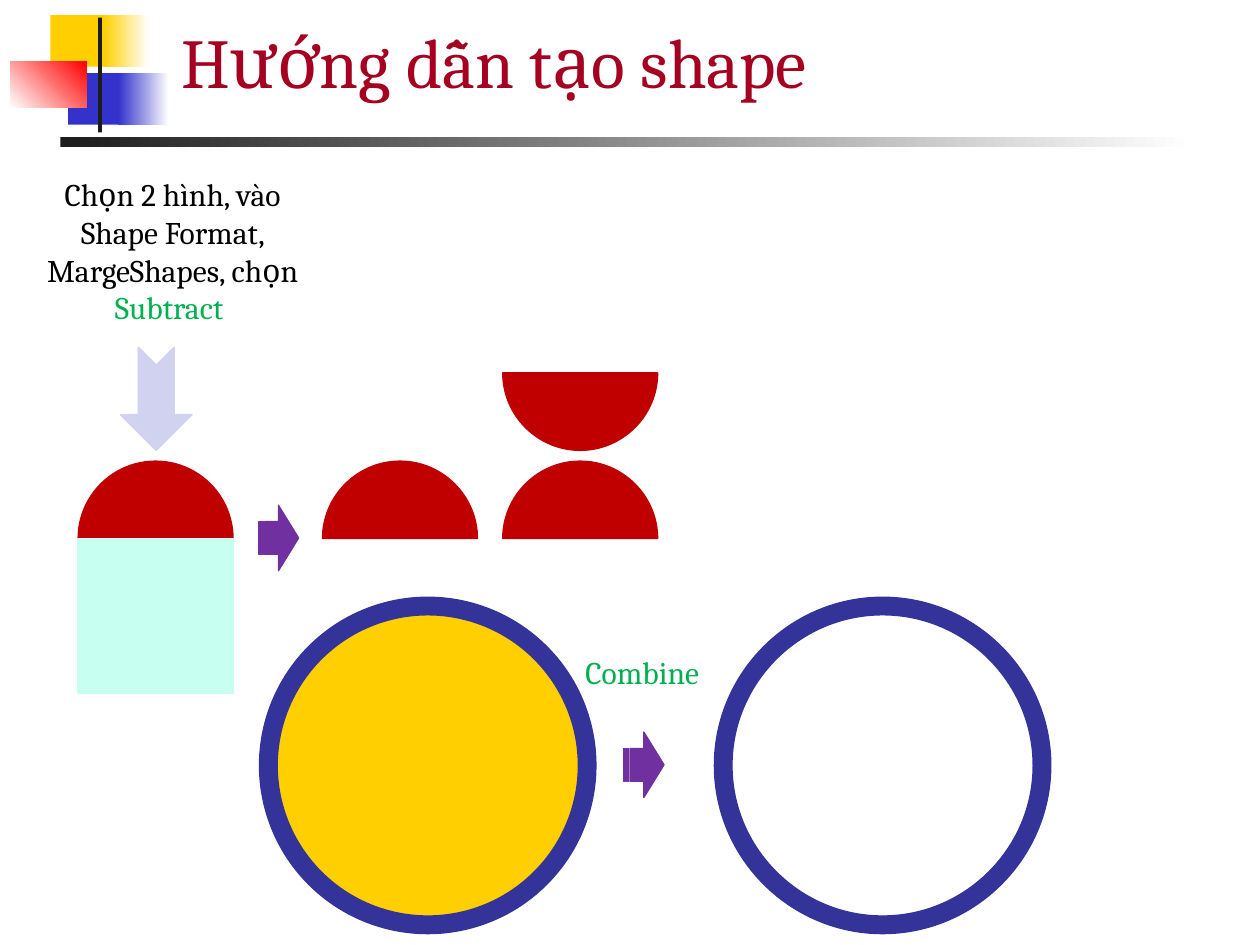
from lxml.etree import SubElement
from pptx import Presentation
from pptx.dml.color import RGBColor
from pptx.enum.shapes import MSO_SHAPE as Preset
from pptx.enum.text import MSO_ANCHOR as Anchor, MSO_AUTO_SIZE as AutoSize, PP_ALIGN as Align
from pptx.oxml.ns import qn
from pptx.util import Inches, Pt

FONT = "Cambria"
WHITE = RGBColor(0xFF, 0xFF, 0xFF)
BLACK = RGBColor(0x00, 0x00, 0x00)
CHARCOAL = RGBColor(0x1C, 0x1C, 0x1C)
YELLOW = RGBColor(0xFF, 0xCF, 0x01)
BLUE = RGBColor(0x33, 0x33, 0xCC)
RED = RGBColor(0xFF, 0x00, 0x00)
CRIMSON = RGBColor(0xA5, 0x00, 0x21)
DARK_RED = RGBColor(0xC0, 0x00, 0x00)
MINT = RGBColor(0xC7, 0xFF, 0xF0)
PURPLE = RGBColor(0x70, 0x30, 0xA0)
GREEN = RGBColor(0x00, 0xB0, 0x50)
LAVENDER = RGBColor(0xD1, 0xD1, 0xF0)
NAVY = RGBColor(0x33, 0x33, 0x99)

DISC = 1.23
RADIUS = DISC / 2
DISC_TOP = 3.66
BASELINE = DISC_TOP + RADIUS
WHEEL = 2.67
WHEEL_TOP = 4.74
WHEEL_MIDDLE = WHEEL_TOP + WHEEL / 2
RIM = 0.14
ARC_RATIO = 0.55


def paint(shape, fill, line=None):
    shape.shadow.inherit = False
    shape.fill.solid()
    shape.fill.fore_color.rgb = fill
    if line is None:
        shape.line.fill.background()
    else:
        shape.line.color.rgb = line
        shape.line.width = Pt(0.75)


def add_figure(page, preset, place, fill, line=None):
    shape = page.shapes.add_shape(preset, *map(Inches, place))
    paint(shape, fill, line)
    return shape


def add_fade(page, place, start, end, angle=0):
    shape = add_figure(page, Preset.RECTANGLE, place, start)
    shape.fill.gradient()
    shape.fill.gradient_angle = angle
    for stop, color in zip(shape.fill.gradient_stops, (start, end)):
        stop.color.rgb = color


def round_diagonals(shape, center):
    middle = (center[0] - shape.left, center[1] - shape.top)
    outline = next(shape.element.iter(qn("a:path")))
    begin = None
    for step in list(outline):
        if step.tag == qn("a:close"):
            continue
        point = step[0]
        end = (int(point.get("x")), int(point.get("y")))
        if step.tag == qn("a:lnTo") and begin[0] != end[0] and begin[1] != end[1]:
            curve = SubElement(outline, qn("a:cubicBezTo"))
            for near, far in ((begin, end), (end, begin)):
                handle = [n + ARC_RATIO * (f - m) for n, f, m in zip(near, far, middle)]
                SubElement(curve, qn("a:pt"), x=str(round(handle[0])), y=str(round(handle[1])))
            curve.append(point)
            outline.replace(step, curve)
        begin = end


def add_round_outline(page, center, contours, color):
    x, y = center
    builder = None
    for contour in contours:
        points = [(Inches(x + dx), Inches(y + dy)) for dx, dy in contour]
        if builder is None:
            builder = page.shapes.build_freeform(*points[0])
        else:
            builder.move_to(*points[0])
        builder.add_line_segments(points[1:], close=True)
    shape = builder.convert_to_shape()
    paint(shape, color, color)
    round_diagonals(shape, (Inches(x), Inches(y)))


def add_half_disc(page, left, flat_edge, direction):
    tip = (0, direction * RADIUS)
    contour = [tip, (RADIUS, 0), (-RADIUS, 0), tip]
    add_round_outline(page, (left + RADIUS, flat_edge), [contour], DARK_RED)


def add_ring(page, left):
    contours = [
        [(0, -radius), (side * radius, 0), (0, radius), (-side * radius, 0), (0, -radius)]
        for radius, side in ((WHEEL / 2 - RIM, -1), (WHEEL / 2, 1))
    ]
    add_round_outline(page, (left + WHEEL / 2, WHEEL_MIDDLE), contours, NAVY)


def add_label(page, place, spans, size, **extra):
    box = page.shapes.add_textbox(*map(Inches, place))
    frame = box.text_frame
    layout = {"word_wrap": True, "auto_size": AutoSize.SHAPE_TO_FIT_TEXT}
    for name, value in {**layout, **extra}.items():
        setattr(frame, name, value)
    para = frame.paragraphs[0]
    para.alignment = Align.CENTER
    for text, color in spans:
        span = para.add_run()
        span.text = text
        for name, value in {"name": FONT, "size": Pt(size)}.items():
            setattr(span.font, name, value)
        span.font.color.rgb = color
    return para


def add_header(page):
    add_figure(page, Preset.RECTANGLE, (0.4, 0.12, 0.48, 0.41), YELLOW)
    add_fade(page, (0.82, 0.12, 0.36, 0.41), YELLOW, WHITE)
    add_figure(page, Preset.RECTANGLE, (0.54, 0.58, 0.46, 0.41), BLUE)
    add_fade(page, (0.94, 0.58, 0.4, 0.41), BLUE, WHITE)
    add_fade(page, (0.08, 0.49, 0.61, 0.36), WHITE, RED, angle=45)
    add_figure(page, Preset.RECTANGLE, (0.78, 0.14, 0.03, 0.91), CHARCOAL)
    add_fade(page, (0.48, 1.09, 9, 0.08), CHARCOAL, WHITE)
    title = add_label(page, (1.34, 0.09, 8.46, 0.77), [("Hướng dẫn tạo shape", CRIMSON)],
                      40, auto_size=AutoSize.NONE, vertical_anchor=Anchor.BOTTOM)
    title.alignment = Align.LEFT


def add_step_arrow(page, left, top):
    add_figure(page, Preset.STRIPED_RIGHT_ARROW, (left, top, 0.32, 0.52), PURPLE, PURPLE)


def add_subtract_demo(page):
    add_figure(page, Preset.OVAL, (0.62, DISC_TOP, DISC, DISC), DARK_RED, DARK_RED)
    add_figure(page, Preset.RECTANGLE, (0.62, BASELINE, DISC, DISC), MINT, MINT)
    add_half_disc(page, 3.99, 2.96, 1)
    for left in (3.99, 2.56):
        add_half_disc(page, left, BASELINE, -1)
    add_step_arrow(page, 2.05, 4.01)
    add_label(page, (0.17, 1.34, 2.4, 1.31),
              [("Chọn 2 hình, vào Shape Format, MargeShapes, chọn ", BLACK),
               ("Subtract ", GREEN)], 18)
    pointer = add_figure(page, Preset.NOTCHED_RIGHT_ARROW,
                         (0.83, 2.88, 0.82, 0.57), LAVENDER, LAVENDER)
    pointer.rotation = 90


def add_combine_demo(page):
    add_ring(page, 5.67)
    for inset, fill in ((0, NAVY), (RIM, YELLOW)):
        size = WHEEL - 2 * inset
        place = (2.06 + inset, WHEEL_TOP + inset, size, size)
        add_figure(page, Preset.OVAL, place, fill, NAVY)
    add_step_arrow(page, 4.95, 5.81)
    add_label(page, (4.36, 5.13, 1.53, 0.4), [("Combine ", GREEN)], 18)


def main():
    deck = Presentation()
    deck.slide_width, deck.slide_height = Inches(10), Inches(7.5)
    page = deck.slides.add_slide(deck.slide_layouts[6])
    add_header(page)
    add_subtract_demo(page)
    add_combine_demo(page)
    deck.save("out.pptx")


if __name__ == "__main__":
    main()
